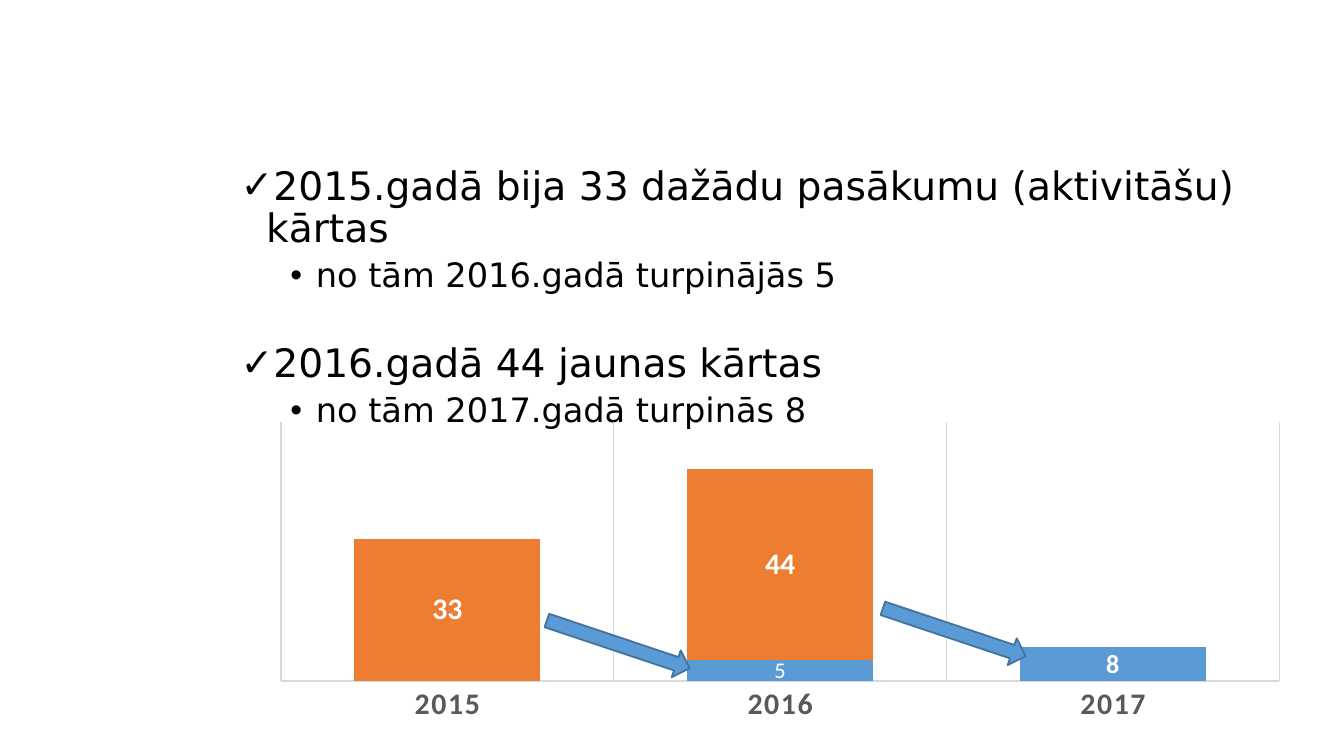
from dataclasses import dataclass

from lxml import etree
from pptx import Presentation
from pptx.chart.data import CategoryChartData
from pptx.dml.color import RGBColor
from pptx.enum.chart import XL_CHART_TYPE as ChartType
from pptx.enum.chart import XL_LABEL_POSITION as LabelPosition
from pptx.enum.chart import XL_TICK_LABEL_POSITION as TickLabels
from pptx.enum.chart import XL_TICK_MARK as TickMark
from pptx.enum.shapes import MSO_SHAPE as Shape
from pptx.enum.text import MSO_ANCHOR as Anchor
from pptx.enum.text import MSO_AUTO_SIZE as AutoSize
from pptx.oxml import parse_xml
from pptx.oxml.ns import nsdecls, qn
from pptx.util import Inches, Pt


@dataclass(frozen=True)
class Theme:
    text: str = "000000"
    label: str = "FFFFFF"
    axis_text: str = "595959"
    grid: str = "D9D9D9"
    continued: str = "5B9BD5"
    new: str = "ED7D31"
    arrow_line: str = "43739E"
    body_font: str = "DejaVu Sans"
    bullet_font: str = "Arial"
    chart_font: str = "Calibri"
    main_size: float = 21
    sub_size: float = 18
    axis_size: float = 16
    small_label_size: float = 12


THEME = Theme()

# Text, level, space before in points
POINTS = [
    ("2015.gadā bija 33 dažādu pasākumu (aktivitāšu) kārtas", 0, 0),
    ("no tām 2016.gadā turpinājās 5", 1, 3.8),
    ("2016.gadā 44 jaunas kārtas", 0, 26.4),
    ("no tām 2017.gadā turpinās 8", 1, 3.8),
]
# Bullet, its font, left indent in inches, type size for each level
LEVELS = [
    ("✓", THEME.body_font, 0.19, THEME.main_size),
    ("•", THEME.bullet_font, 0.56, THEME.sub_size),
]
HANGING = 0.19

YEARS = ["2015", "2016", "2017"]
# Name, values, fill, label size
ROUNDS = [
    ("Series 1", (None, 5, 8), THEME.continued, 14),
    ("Series 2", (33, 44, None), THEME.new, 16),
]
# Left, top, width, height in inches on the slide
CHART_BOX = (1.59, 2.73, 8.12, 2.9)
PLOT_BOX = (2.09, 3.14, 7.43, 1.93)
ARROW_CORNERS = [(4.04, 4.69), (6.54, 4.6)]


def apply_format(target, values):
    for name, value in values.items():
        setattr(target, name, value)


def format_font(font, name, size, color, bold=False):
    apply_format(font, {"name": name, "size": Pt(size), "bold": bold})
    font.color.rgb = RGBColor.from_string(color)


def format_line(line, color, width):
    line.color.rgb = RGBColor.from_string(color)
    line.width = Pt(width)


def format_fill(fill, color):
    fill.solid()
    fill.fore_color.rgb = RGBColor.from_string(color)


def add_bullet(paragraph, mark, font_name, indent):
    properties = paragraph._p.get_or_add_pPr()
    properties.set("marL", str(Inches(indent)))
    properties.set("indent", str(-Inches(HANGING)))
    etree.SubElement(properties, qn("a:buFont")).set("typeface", font_name)
    etree.SubElement(properties, qn("a:buChar")).set("char", mark)


def fill_points(body):
    apply_format(body, {
        "left": Inches(1.72), "top": Inches(1.2),
        "width": Inches(7.73), "height": Inches(2.59),
    })
    frame = body.text_frame
    apply_format(frame, {
        "word_wrap": True, "auto_size": AutoSize.NONE,
        "vertical_anchor": Anchor.TOP,
        "margin_left": Inches(0.07), "margin_right": Inches(0.07),
        "margin_top": Inches(0.04), "margin_bottom": Inches(0.04),
    })
    for index, (text, level, space) in enumerate(POINTS):
        paragraph = frame.add_paragraph() if index else frame.paragraphs[0]
        mark, mark_font, indent, size = LEVELS[level]
        add_bullet(paragraph, mark, mark_font, indent)
        apply_format(paragraph, {
            "level": level, "line_spacing": 0.9,
            "space_before": Pt(space), "space_after": Pt(0),
        })
        run = paragraph.add_run()
        run.text = text
        format_font(run.font, THEME.body_font, size, THEME.text)


def set_plot_area(chart):
    left, top, width, height = CHART_BOX
    plot_left, plot_top, plot_width, plot_height = PLOT_BOX
    shares = {
        "x": (plot_left - left) / width, "y": (plot_top - top) / height,
        "w": plot_width / width, "h": plot_height / height,
    }
    sizes = "".join(f'<c:{key} val="{share:.4f}"/>'
                    for key, share in shares.items())
    layout = parse_xml(
        f'<c:layout {nsdecls("c")}><c:manualLayout><c:layoutTarget val="inner"/>'
        f'<c:xMode val="edge"/><c:yMode val="edge"/>{sizes}'
        "</c:manualLayout></c:layout>")
    plot_area = chart._chartSpace.chart.plotArea
    for automatic in plot_area.findall(qn("c:layout")):
        plot_area.remove(automatic)
    plot_area.insert(0, layout)


def format_axes(chart):
    years = chart.category_axis
    apply_format(years, {
        "major_tick_mark": TickMark.NONE, "minor_tick_mark": TickMark.NONE,
        "has_major_gridlines": True,
    })
    format_line(years.format.line, THEME.grid, 0.75)
    format_line(years.major_gridlines.format.line, THEME.grid, 0.75)
    year_font = years.tick_labels.font
    format_font(year_font, THEME.chart_font, THEME.axis_size,
                THEME.axis_text, True)
    year_font._element.set("spc", "100")
    apply_format(chart.value_axis, {
        "minimum_scale": 0, "maximum_scale": 60, "visible": False,
        "has_major_gridlines": False, "tick_label_position": TickLabels.NONE,
    })


def add_rounds_chart(slide):
    data = CategoryChartData()
    data.categories = YEARS
    for name, values, _, _ in ROUNDS:
        data.add_series(name, values)
    chart = slide.shapes.add_chart(
        ChartType.COLUMN_STACKED, *map(Inches, CHART_BOX), data).chart
    apply_format(chart, {"has_legend": False, "has_title": False})
    format_font(chart.font, THEME.chart_font, 10, THEME.text)
    set_plot_area(chart)
    format_axes(chart)

    plot = chart.plots[0]
    apply_format(plot, {"gap_width": 79, "overlap": 100,
                        "vary_by_categories": False})
    for series, (_, _, color, size) in zip(plot.series, ROUNDS):
        format_fill(series.format.fill, color)
        labels = series.data_labels
        apply_format(labels, {"show_value": True,
                              "position": LabelPosition.CENTER})
        format_font(labels.font, THEME.chart_font, size, THEME.label, True)

    # The low 2016 segment takes a smaller label
    low_label = plot.series[0].points[1].data_label
    low_label.position = LabelPosition.CENTER
    run = low_label.text_frame.paragraphs[0].add_run()
    run.text = "5"
    format_font(run.font, THEME.chart_font, THEME.small_label_size, THEME.label)


def add_carry_over_arrow(slide, left, top):
    arrow = slide.shapes.add_shape(Shape.RIGHT_ARROW, Inches(left), Inches(top),
                                   Inches(1.12), Inches(0.21))
    arrow.rotation = 18.5
    arrow.shadow.inherit = False
    format_fill(arrow.fill, THEME.continued)
    format_line(arrow.line, THEME.arrow_line, 1)


def main():
    deck = Presentation()
    # Widescreen, 16 to 9
    apply_format(deck, {"slide_width": Inches(10),
                        "slide_height": Inches(10 * 9 / 16)})
    slide = deck.slides.add_slide(deck.slide_layouts[1])

    # The slide has body text but no title
    title = slide.shapes.title._element
    title.getparent().remove(title)
    fill_points(slide.placeholders[1])

    # Rounds per year, with arrows for those carried over
    add_rounds_chart(slide)
    for left, top in ARROW_CORNERS:
        add_carry_over_arrow(slide, left, top)

    deck.save("out.pptx")


if __name__ == "__main__":
    main()
